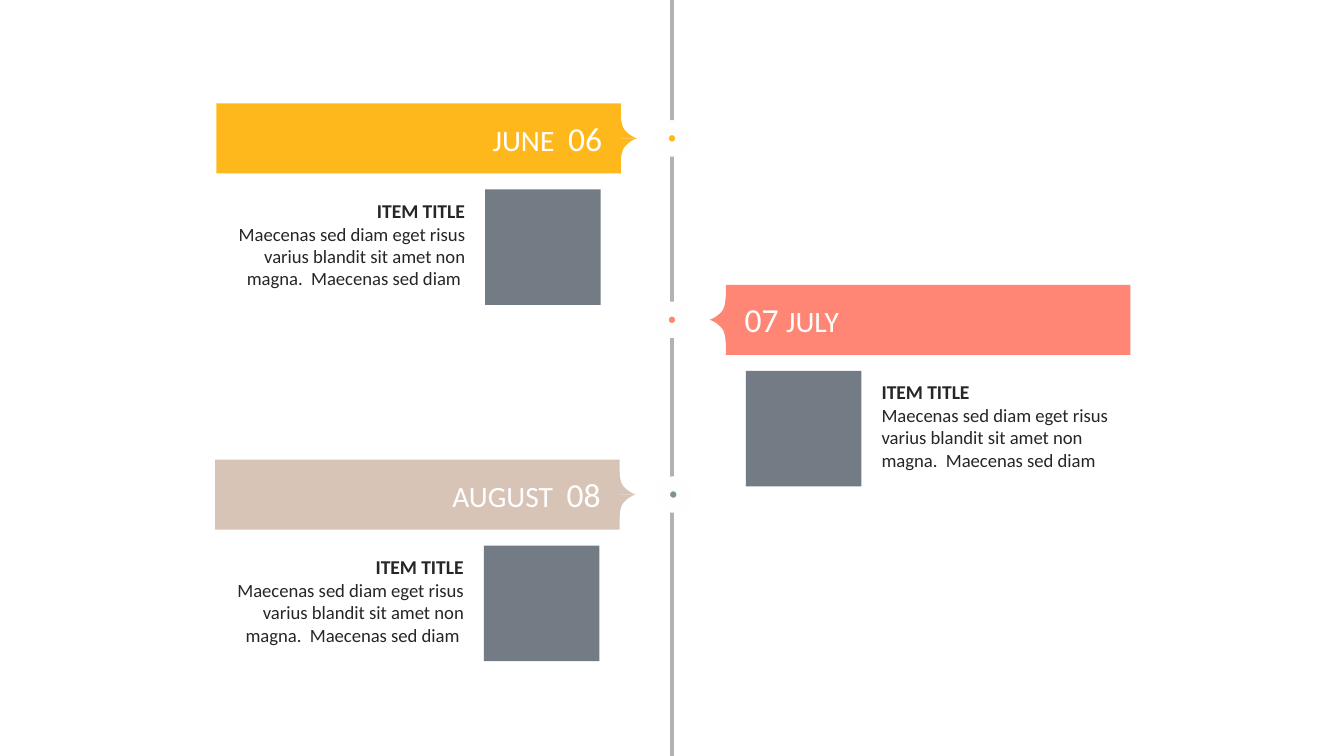
import lxml.etree
import pptx
import pptx.dml.color
import pptx.enum.shapes
import pptx.enum.text
import pptx.oxml.ns
import pptx.util

Inches = pptx.util.Inches
Pt = pptx.util.Pt
SHAPE = pptx.enum.shapes.MSO_SHAPE
ALIGN = pptx.enum.text.PP_ALIGN
ANCHOR = pptx.enum.text.MSO_ANCHOR
qn = pptx.oxml.ns.qn

BAR_W, BAR_H = 3.01, 0.52
HEADING_W, BODY_W, PHOTO = 2.86, 1.73, 0.86
DOT = 0.16
BODY = "Maecenas sed diam eget risus varius blandit sit amet non magna.  Maecenas sed diam"
POINTER_CURVES = [
    [(-0.12, -0.17), (-0.12, -0.17), (-0.12, -0.08), (-0.08, -0.05)],
    [(-0.08, -0.05), (-0.04, -0.01), (0, 0), (0, 0)],
]


def rgb(color):
    return pptx.dml.color.RGBColor.from_string(color)


def bezier(points, steps=8):
    a, b, c, d = points
    for i in range(1, steps + 1):
        t = i / steps
        u = 1 - t
        yield tuple(
            u**3 * a[k] + 3 * u * u * t * b[k] + 3 * u * t * t * c[k] + t**3 * d[k]
            for k in (0, 1)
        )


class Timeline:
    font = "Calibri"
    white = "FFFEFE"
    dark = "262626"
    gray = "B3B2B2"
    photo_color = "323E4A"

    def __init__(self, s):
        self.s = s

    def spine(self, x, top, bottom):
        line = self.s.shapes.add_connector(
            pptx.enum.shapes.MSO_CONNECTOR.STRAIGHT,
            Inches(x), Inches(top), Inches(x), Inches(bottom))
        line.line.color.rgb = rgb(self.gray)
        line.line.width = Pt(2)
        lxml.etree.SubElement(line._element.spPr, qn("a:effectLst"))

    def paint(self, sp, color):
        sp.shadow.inherit = False
        sp.fill.solid()
        sp.fill.fore_color.rgb = rgb(color)
        sp.line.fill.background()

    def shape(self, kind, x, y, w, h, color):
        sp = self.s.shapes.add_shape(kind, Inches(x), Inches(y), Inches(w), Inches(h))
        self.paint(sp, color)
        return sp

    def dot(self, x, y, color):
        sp = self.shape(SHAPE.OVAL, x, y, DOT, DOT, color)
        sp.line.color.rgb = rgb(self.white)
        sp.line.width = Pt(8)

    def bar(self, x, y, color):
        sp = self.shape(SHAPE.ROUNDED_RECTANGLE, x, y, BAR_W, BAR_H, color)
        sp.adjustments[0] = 0

    def photo(self, x, y):
        sp = self.shape(SHAPE.RECTANGLE, x, y, PHOTO, PHOTO, self.photo_color)
        clr = sp._element.spPr.find(".//" + qn("a:srgbClr"))
        lxml.etree.SubElement(clr, qn("a:alpha"), val="68000")

    def pointer(self, x, y, side, color):
        outline = [POINTER_CURVES[0][0]]
        for curve in POINTER_CURVES:
            outline.extend(bezier(curve))
        outline += [(-0.17, 0), (-0.17, -0.17)]
        for half in (1, -1):
            points = [(Inches(x + side * dx), Inches(y + half * dy)) for dx, dy in outline]
            builder = self.s.shapes.build_freeform(*points[0])
            builder.add_line_segments(points[1:], close=True)
            self.paint(builder.convert_to_shape(), color)

    def text(self, x, y, w, h, align, anchor, paragraphs):
        tf = self.s.shapes.add_textbox(Inches(x), Inches(y), Inches(w), Inches(h)).text_frame
        tf.word_wrap = True
        tf.vertical_anchor = anchor
        tf.margin_left = tf.margin_right = tf.margin_top = tf.margin_bottom = 0
        for i, (runs, color, bold) in enumerate(paragraphs):
            p = tf.paragraphs[0] if i == 0 else tf.add_paragraph()
            p.alignment = align
            p.font.name = self.font
            p.font.color.rgb = rgb(color)
            p.font.bold = bold
            for words, size in runs:
                r = p.add_run()
                r.text = words
                r.font.size = Pt(size)

    def item(self, x, y, side, color, heading, body):
        def place(offset, width):
            return x + offset if side > 0 else x + BAR_W - offset - width

        align = ALIGN.RIGHT if side > 0 else ALIGN.LEFT
        self.bar(x, y, color)
        self.text(place(0.01, HEADING_W), y + 0.08, HEADING_W, 0.35, align,
                  ANCHOR.MIDDLE, [(heading, self.white, False)])
        self.pointer(place(3.13, 0), y + BAR_H / 2, side, color)
        self.text(place(0.12, BODY_W), y + 0.71, BODY_W, 0.7, align, ANCHOR.TOP, [
            ([("ITEM TITLE", 10.5)], self.dark, True),
            ([(body, 10)], self.dark, False),
        ])
        self.photo(place(2, PHOTO), y + 0.64)


def main():
    prs = pptx.Presentation()
    prs.slide_width = Inches(10)
    prs.slide_height = prs.slide_width * 9 // 16
    timeline = Timeline(prs.slides.add_slide(prs.slide_layouts[6]))
    items = [
        (1.61, 0.77, 1, "FFB81C", [("JUNE  ", 15.8), ("06", 18)], BODY + " "),
        (5.4, 2.12, -1, "FF8674", [("07 ", 18), ("JULY", 15.8)], BODY),
        (1.6, 3.42, 1, "D7C4B7", [("AUGUST  ", 15.8), ("08", 18)], BODY + " "),
    ]
    dots = [(4.92, "FFB81C"), (4.92, "FF8674"), (4.93, "809295")]

    timeline.spine(5, -0.07, 5.65)
    for (x, color), item in zip(dots, items):
        timeline.dot(x, item[1] + (BAR_H - DOT) / 2, color)
    for item in items:
        timeline.item(*item)
    prs.save("out.pptx")


if __name__ == "__main__":
    main()
